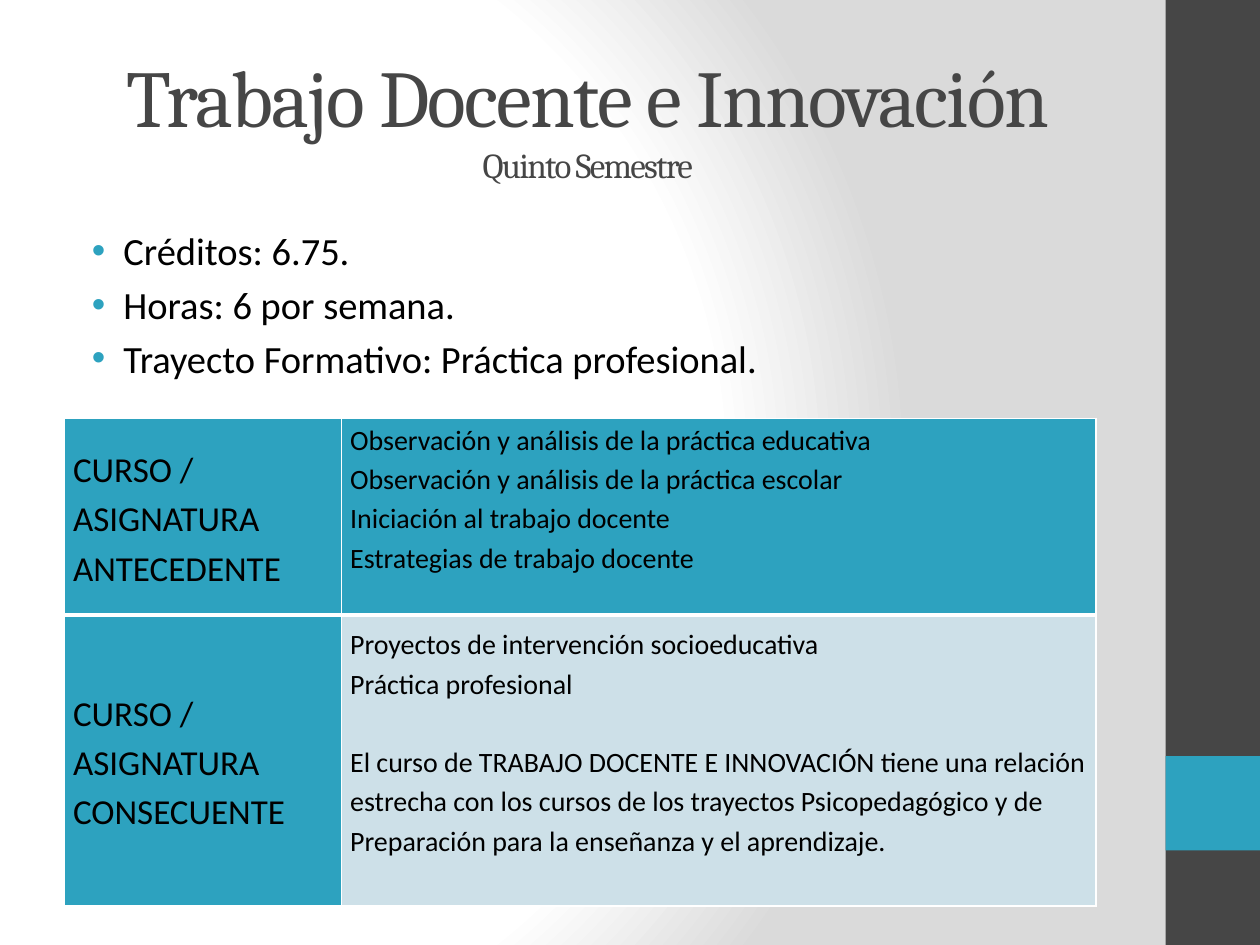
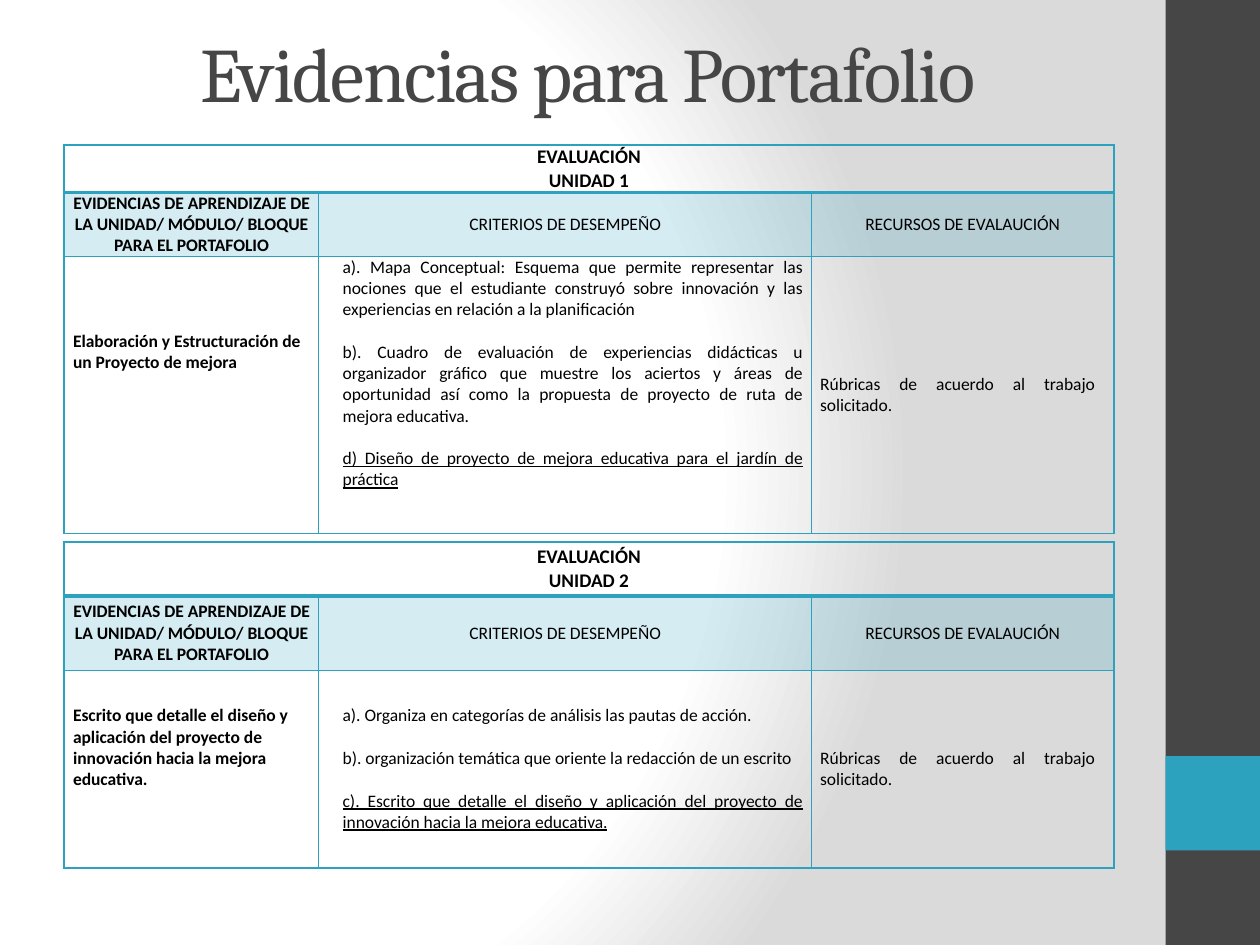
"""Build two course slides with a shared master, title style and table builder."""
from lxml import etree
from pptx import Presentation
from pptx import util as u
from pptx.dml.color import RGBColor
from pptx.enum import shapes, text
from pptx.oxml import parse_xml
from pptx.oxml.ns import nsdecls, qn

BLACK, WHITE, DARK, TEAL, PALE = "000000", "FFFFFF", "464646", "2DA2BF", "CDE0E8"
HEADING_FONT, BODY_FONT = "Cambria", "Calibri"
CENTER, LEFT, JUSTIFY = text.PP_ALIGN.CENTER, text.PP_ALIGN.LEFT, text.PP_ALIGN.JUSTIFY
MIDDLE = text.MSO_ANCHOR.MIDDLE


def add_run(paragraph, words, size, font=BODY_FONT, colour=BLACK, bold=False, underline=False):
    """Add one formatted run to a paragraph."""
    run = paragraph.add_run()
    run.text = words
    run.font.size = u.Pt(size)
    run.font.name = font
    run.font.bold = bold
    run.font.underline = underline
    run.font.color.rgb = RGBColor.from_string(colour)
    return run


def add_grid(slide, left, top, widths, heights, line_colour, rule, rows):
    """Add a table with thin borders and a thicker rule under its first row."""
    frame = slide.shapes.add_table(
        len(heights), len(widths), u.Inches(left), u.Inches(top),
        u.Inches(sum(widths)), u.Inches(sum(heights)))
    table = frame.table
    table.first_row = table.horz_banding = False
    for column, width in zip(table.columns, widths):
        column.width = u.Inches(width)
    for row, height in zip(table.rows, heights):
        row.height = u.Inches(height)
    for row_index, row in enumerate(rows):
        if len(row) == 1:
            table.cell(row_index, 0).merge(table.cell(row_index, len(widths) - 1))
        for column_index in range(len(widths)):
            cell = table.cell(row_index, column_index)
            content = row[column_index] if column_index < len(row) else {"lines": []}
            cell.vertical_anchor = MIDDLE
            cell.margin_left = u.Inches(content.get("left", 0.07))
            cell.margin_right = u.Inches(content.get("right", 0.07))
            cell.margin_top = 0
            cell.margin_bottom = u.Inches(content.get("bottom", 0))
            for index, words in enumerate(content["lines"]):
                frame_text = cell.text_frame
                paragraph = frame_text.add_paragraph() if index else frame_text.paragraphs[0]
                paragraph.alignment = content.get("align", LEFT)
                paragraph.line_spacing = content.get("spacing", 1.0)
                paragraph.space_before = u.Pt(content.get("gaps", {}).get(index, 0))
                add_run(paragraph, words, content["size"], bold=content.get("bold", False),
                        underline=index == content.get("underlined"))
            if "fill" in content:
                cell.fill.solid()
                cell.fill.fore_color.rgb = RGBColor.from_string(content["fill"])
            else:
                cell.fill.background()
            properties = cell._tc.get_or_add_tcPr()
            if "opacity" in content:
                tint = properties.find(".//" + qn("a:srgbClr"))
                etree.SubElement(tint, qn("a:alpha")).set("val", str(content["opacity"] * 1000))
            sides = {"L": 1, "R": 1, "T": rule if row_index == 1 else 1,
                     "B": rule if row_index == 0 else 1}
            for position, (side, weight) in enumerate(sides.items()):
                properties.insert(position, parse_xml(
                    f'<a:ln{side} {nsdecls("a")} w="{u.Pt(weight)}"><a:solidFill>'
                    f'<a:srgbClr val="{line_colour}"/></a:solidFill></a:ln{side}>'))


presentation = Presentation()
presentation.slide_width = u.Inches(10)
presentation.slide_height = u.Inches(7.5)
course_slide = presentation.slides.add_slide(presentation.slide_layouts[1])
evidence_slide = presentation.slides.add_slide(presentation.slide_layouts[5])

master = presentation.slide_master
master.background.fill.solid()
solid = master.element.find(".//" + qn("p:bgPr") + "/" + qn("a:solidFill"))
stops = "".join(f'<a:gs pos="{place * 1000}"><a:srgbClr val="{colour}"/></a:gs>'
                for place, colour in ((0, WHITE), (75, WHITE), (100, "DADADA")))
solid.getparent().replace(solid, parse_xml(
    f'<a:gradFill {nsdecls("a")} rotWithShape="1"><a:gsLst>{stops}</a:gsLst><a:path path="circle">'
    '<a:fillToRect l="20000" t="50000" r="100000" b="50000"/></a:path></a:gradFill>'))

for order, (top, height, colour) in enumerate(((0, 7.5, DARK), (6, 0.75, TEAL))):
    band = course_slide.shapes.add_shape(
        shapes.MSO_SHAPE.RECTANGLE, u.Inches(9.25), u.Inches(top), u.Inches(0.75), u.Inches(height))
    band.shadow.inherit = False
    band.fill.solid()
    band.fill.fore_color.rgb = RGBColor.from_string(colour)
    band.line.fill.background()
    band.element.nvSpPr.cNvPr.set("id", str(20 + order))
    master.shapes.element.insert(2 + order, band.element)

for slide, height, title_lines in (
        (course_slide, 1.25, (("Trabajo Docente e Innovación", 46), ("Quinto Semestre", 20))),
        (evidence_slide, 0.54, (("Evidencias para Portafolio", 44),))):
    title = slide.shapes.title
    title.left, title.top = u.Inches(0.5), u.Inches(0.3)
    title.width, title.height = u.Inches(8.33), u.Inches(height)
    title.text_frame.auto_size = text.MSO_AUTO_SIZE.NONE
    title.text_frame.vertical_anchor = MIDDLE
    paragraph = title.text_frame.paragraphs[0]
    paragraph.alignment = CENTER
    for index, (words, size) in enumerate(title_lines):
        if index:
            paragraph.add_line_break()
        run = add_run(paragraph, words, size, HEADING_FONT, DARK)
        run._r.get_or_add_rPr().set("spc", "-100")

body = course_slide.placeholders[1]
body.left, body.top = u.Inches(0.5), u.Inches(1.75)
body.width, body.height = u.Inches(8.33), u.Inches(5.25)
body.text_frame.auto_size = text.MSO_AUTO_SIZE.NONE
facts = ("Créditos: 6.75.", "Horas: 6 por semana.", "Trayecto Formativo: Práctica profesional.")
for index, fact in enumerate(facts):
    paragraph = body.text_frame.add_paragraph() if index else body.text_frame.paragraphs[0]
    add_run(paragraph, fact, 22)
    properties = paragraph._p.get_or_add_pPr()
    properties.set("marL", str(u.Inches(0.38)))
    properties.set("indent", str(u.Inches(-0.25)))
    properties.append(parse_xml(
        f'<a:buClr {nsdecls("a")}><a:srgbClr val="{TEAL}"/></a:buClr>'))
    properties.append(parse_xml(f'<a:buFont {nsdecls("a")} typeface="Arial"/>'))
    properties.append(parse_xml(f'<a:buChar {nsdecls("a")} char="•"/>'))

course_label = {"size": 20, "spacing": 1.15, "fill": TEAL}
course_list = {"size": 16, "spacing": 1.15, "bottom": 0.31}
add_grid(course_slide, 0.51, 3.32, (2.2, 5.99), (1.56, 2.31), WHITE, 3, [
    [{**course_label, "lines": ["CURSO / ASIGNATURA ANTECEDENTE"]},
     {**course_list, "fill": TEAL, "lines": [
         "Observación y análisis de la práctica educativa",
         "Observación y análisis de la práctica escolar",
         "Iniciación al trabajo docente",
         "Estrategias de trabajo docente"]}],
    [{**course_label, "lines": ["CURSO / ASIGNATURA CONSECUENTE"]},
     {**course_list, "fill": PALE, "gaps": {2: 22.4}, "lines": [
         "Proyectos de intervención socioeducativa",
         "Práctica profesional",
         "El curso de TRABAJO DOCENTE E INNOVACIÓN tiene una relación estrecha con los cursos "
         "de los trayectos Psicopedagógico y de Preparación para la enseñanza y el "
         "aprendizaje."]}],
])

units = (
    ("UNIDAD 1", 1.15, (0.37, 0.51, 2.19), 0.68, 0.34,
     "Elaboración y Estructuración de un Proyecto de mejora",
     ["a). Mapa Conceptual: Esquema que permite representar las nociones que el estudiante "
      "construyó sobre innovación y las experiencias en relación a la planificación",
      "b). Cuadro de evaluación de experiencias didácticas u organizador gráfico que muestre "
      "los aciertos y áreas de oportunidad así como la propuesta de proyecto de ruta de "
      "mejora educativa.",
      "d) Diseño de proyecto de mejora educativa para el jardín de práctica"]),
    ("UNIDAD 2", 4.3, (0.43, 0.59, 1.57), 0.34, 0,
     "Escrito que detalle el diseño y aplicación del proyecto de innovación hacia la mejora "
     "educativa.",
     ["a). Organiza en categorías de análisis las pautas de acción.",
      "b). organización temática que oriente la redacción de un escrito",
      "c). Escrito que detalle el diseño y aplicación del proyecto de innovación hacia la "
      "mejora educativa."]),
)
heading = {"size": 10, "align": CENTER, "fill": TEAL, "opacity": 20}
for unit, top, heights, evidence_bottom, criteria_bottom, evidence, criteria in units:
    add_grid(evidence_slide, 0.51, top, (2.02, 3.91, 2.4), heights, TEAL, 2, [
        [{"lines": ["EVALUACIÓN", unit], "size": 11, "bold": True, "align": CENTER}],
        [{**heading, "bold": True, "lines": [
            "EVIDENCIAS DE APRENDIZAJE DE LA UNIDAD/ MÓDULO/ BLOQUE PARA EL PORTAFOLIO"]},
         {**heading, "lines": ["CRITERIOS DE DESEMPEÑO"]},
         {**heading, "lines": ["RECURSOS DE EVALAUCIÓN"]}],
        [{"lines": [evidence], "size": 10, "bold": True, "bottom": evidence_bottom},
         {"lines": criteria, "size": 10, "align": JUSTIFY, "left": 0.19,
          "bottom": criteria_bottom, "gaps": {1: 12.2, 2: 12.2}, "underlined": 2},
         {"lines": ["Rúbricas de acuerdo al trabajo solicitado."], "size": 10,
          "align": JUSTIFY, "right": 0.15}],
    ])

presentation.save("out.pptx")
